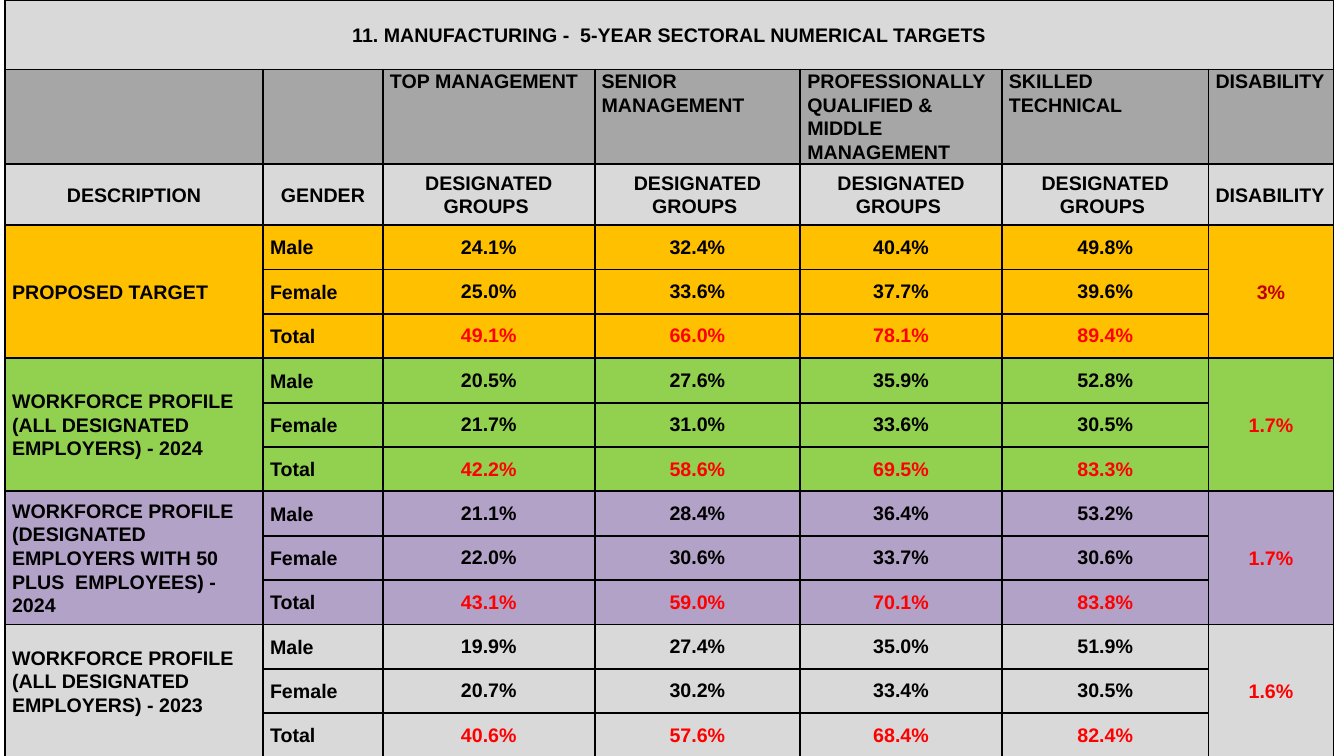
import pptx
import pptx.dml.color
import pptx.enum.text
import pptx.oxml
import pptx.util
from pptx.oxml.ns import nsdecls

Pt = pptx.util.Pt
LEFT = pptx.enum.text.PP_ALIGN.LEFT
CENTER = pptx.enum.text.PP_ALIGN.CENTER
TOP = pptx.enum.text.MSO_ANCHOR.TOP
MIDDLE = pptx.enum.text.MSO_ANCHOR.MIDDLE

COLORS = {
    "black": "000000", "red": "FF0000", "dark red": "C00000",
    "light grey": "D9D9D9", "grey": "A6A6A6",
    "amber": "FFC000", "green": "92D050", "purple": "B3A2C7",
}
COL_WIDTHS = [184.3, 85.7, 151.2, 146.9, 144, 147.6, 89.3]
HEADER_HEIGHTS = [49.7, 64.8, 43.9]
ROW_HEIGHT = 31.7
TITLE = "11. MANUFACTURING -  5-YEAR SECTORAL NUMERICAL TARGETS"
LEVELS = ["", "", "TOP MANAGEMENT", "SENIOR MANAGEMENT",
          "PROFESSIONALLY QUALIFIED & MIDDLE MANAGEMENT",
          "SKILLED TECHNICAL", "DISABILITY"]
SUBHEADS = ["DESCRIPTION", "GENDER"] + ["DESIGNATED GROUPS "] * 4 + ["DISABILITY"]
GENDERS = ["Male", "Female", "Total"]
# description, fill, disability share, its colour, shares by gender
GROUPS = [
    ("PROPOSED TARGET", "amber", "3%", "dark red",
     [(24.1, 32.4, 40.4, 49.8), (25.0, 33.6, 37.7, 39.6), (49.1, 66.0, 78.1, 89.4)]),
    ("WORKFORCE PROFILE (ALL DESIGNATED EMPLOYERS) - 2024", "green", "1.7%", "red",
     [(20.5, 27.6, 35.9, 52.8), (21.7, 31.0, 33.6, 30.5), (42.2, 58.6, 69.5, 83.3)]),
    ("WORKFORCE PROFILE (DESIGNATED EMPLOYERS WITH 50 PLUS  EMPLOYEES) - 2024",
     "purple", "1.7%", "red",
     [(21.1, 28.4, 36.4, 53.2), (22.0, 30.6, 33.7, 30.6), (43.1, 59.0, 70.1, 83.8)]),
    ("WORKFORCE PROFILE (ALL DESIGNATED EMPLOYERS) - 2023", "light grey", "1.6%", "red",
     [(19.9, 27.4, 35.0, 51.9), (20.7, 30.2, 33.4, 30.5), (40.6, 57.6, 68.4, 82.4)]),
]


def rgb(name):
    return pptx.dml.color.RGBColor.from_string(COLORS[name])


def style_cell(cell, fill):
    """Give a cell its black borders, narrow margins and fill."""
    tcPr = cell._tc.get_or_add_tcPr()
    for side in ("lnL", "lnR", "lnT", "lnB"):
        tcPr.append(pptx.oxml.parse_xml(
            f'<a:{side} {nsdecls("a")} w="{Pt(1.5)}"><a:solidFill>'
            f'<a:srgbClr val="{COLORS["black"]}"/></a:solidFill></a:{side}>'))
    cell.fill.solid()
    cell.fill.fore_color.rgb = rgb(fill)
    cell.margin_left = cell.margin_right = Pt(5)
    cell.margin_top = cell.margin_bottom = 0


def write_cell(cell, text, align=CENTER, color="black", anchor=MIDDLE, spacing=1.07):
    cell.vertical_anchor = anchor
    p = cell.text_frame.paragraphs[0]
    p.text = text
    p.alignment = align
    p.line_spacing = spacing
    p.font.name = "Arial"
    p.font.size = Pt(14)
    p.font.bold = True
    p.font.color.rgb = rgb(color)


def fill_header(table):
    last = len(COL_WIDTHS) - 1
    for row, fill in enumerate(["light grey", "grey", "light grey"]):
        for col in range(last + 1):
            style_cell(table.cell(row, col), fill)
    table.cell(0, 0).merge(table.cell(0, last))
    write_cell(table.cell(0, 0), TITLE)
    for col, (level, subhead) in enumerate(zip(LEVELS, SUBHEADS)):
        if level:
            write_cell(table.cell(1, col), level, LEFT, anchor=TOP)
        write_cell(table.cell(2, col), subhead, LEFT if col == last else CENTER)


def fill_group(table, top, group):
    """Fill the three gender rows that start at row top."""
    description, fill, disability, disability_color, shares = group
    last = len(COL_WIDTHS) - 1
    bottom = top + len(GENDERS) - 1
    for row, (gender, values) in enumerate(zip(GENDERS, shares), top):
        for col in range(last + 1):
            style_cell(table.cell(row, col), fill)
        write_cell(table.cell(row, 1), gender, LEFT)
        color = "red" if gender == "Total" else "black"
        for col, value in enumerate(values, 2):
            write_cell(table.cell(row, col), f"{value:.1f}%", color=color, spacing=1.0)
    for col in (0, last):
        table.cell(top, col).merge(table.cell(bottom, col))
    write_cell(table.cell(top, 0), description, LEFT)
    write_cell(table.cell(top, last), disability, color=disability_color)


def add_targets_table(s, left, top):
    heights = HEADER_HEIGHTS + [ROW_HEIGHT] * len(GENDERS) * len(GROUPS)
    table = s.shapes.add_table(len(heights), len(COL_WIDTHS), Pt(left), Pt(top),
                               Pt(sum(COL_WIDTHS)), Pt(sum(heights))).table
    table.first_row = table.horz_banding = False
    for column, width in zip(table.columns, COL_WIDTHS):
        column.width = Pt(width)
    for row, height in zip(table.rows, heights):
        row.height = Pt(height)
    fill_header(table)
    for i, group in enumerate(GROUPS):
        fill_group(table, len(HEADER_HEIGHTS) + i * len(GENDERS), group)
    # The last description sits a little above the middle of its cell
    table.cell(len(heights) - len(GENDERS), 0).margin_bottom = Pt(14)


def main():
    prs = pptx.Presentation()
    prs.slide_width, prs.slide_height = Pt(960), Pt(540)
    s = prs.slides.add_slide(prs.slide_layouts[6])
    add_targets_table(s, 3.6, 0)
    prs.save("out.pptx")


if __name__ == "__main__":
    main()
